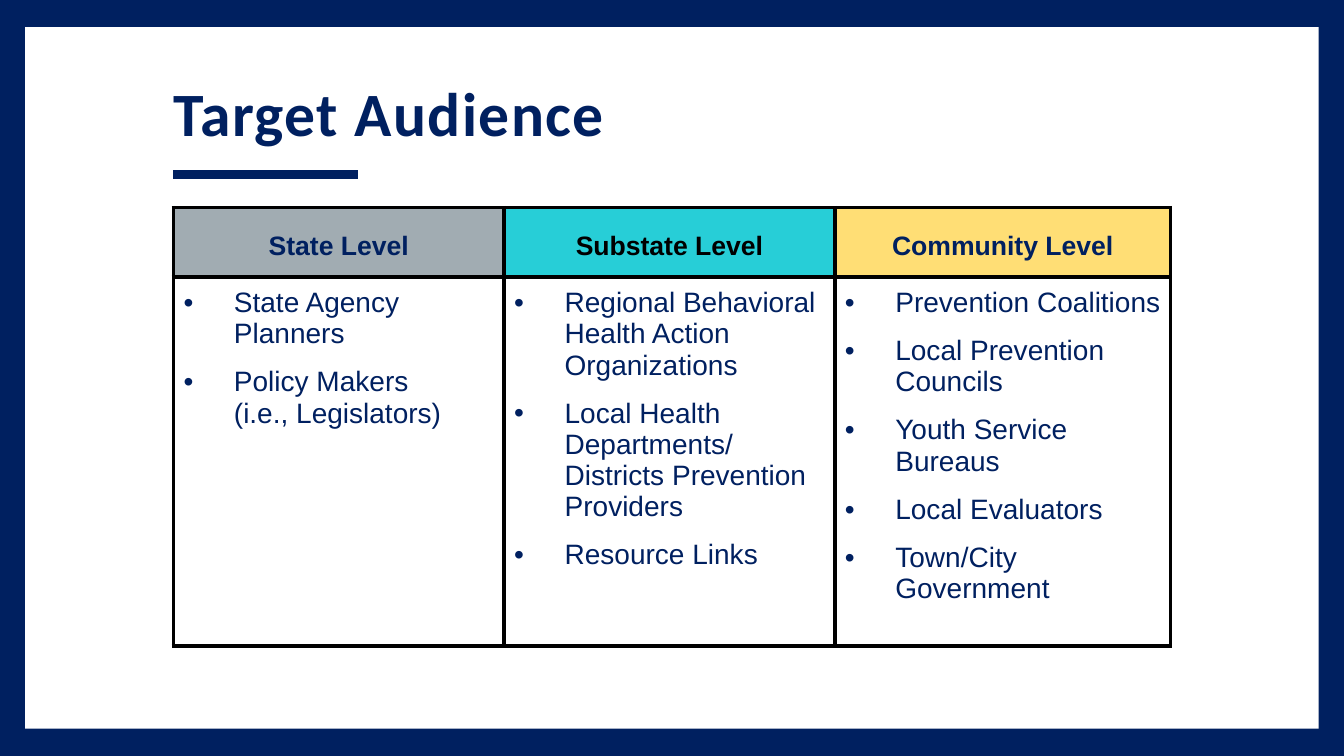
from lxml import etree
from pptx import Presentation
from pptx.dml.color import RGBColor
from pptx.enum.shapes import MSO_CONNECTOR, MSO_SHAPE
from pptx.enum.text import MSO_ANCHOR, PP_ALIGN
from pptx.oxml.ns import qn
from pptx.util import Inches, Pt

RECTANGLE = MSO_SHAPE.RECTANGLE
STRAIGHT = MSO_CONNECTOR.STRAIGHT
MIDDLE, TOP, BOTTOM = MSO_ANCHOR.MIDDLE, MSO_ANCHOR.TOP, MSO_ANCHOR.BOTTOM
CENTER = PP_ALIGN.CENTER

NAVY, BLACK, WHITE = "002060", "000000", "FFFFFF"
TITLE = "Target Audience"
AUDIENCES = [
    {"level": "State Level", "fill": "A1ACB2", "color": NAVY,
     "groups": ["State Agency Planners", "Policy Makers\v(i.e., Legislators)"]},
    {"level": "Substate Level", "fill": "27CED7", "color": BLACK,
     "groups": ["Regional Behavioral Health Action Organizations",
                "Local Health Departments/ Districts Prevention Providers",
                "Resource Links"]},
    {"level": "Community Level", "fill": "FFDE75", "color": NAVY,
     "groups": ["Prevention Coalitions", "Local Prevention Councils",
                "Youth Service Bureaus", "Local Evaluators",
                "Town/City Government"]},
]

WIDTH, HEIGHT = 13.33, 7.5
LEFT = 1.72
FRAME_X, FRAME_Y = 0.25, 0.27
TITLE_TOP, TITLE_WIDTH, TITLE_HEIGHT = 0.11, 10.82, 1.36
RULE_Y, RULE_LENGTH, RULE_WEIGHT = 1.73, 1.83, 6
TABLE_TOP = 2.06
COLUMN_WIDTHS = [3.28, 3.28, 3.33]
ROW_HEIGHTS = [0.69, 3.66]
CELL_INSET, BULLET_INDENT, BORDER_WEIGHT = 0.1, 0.5, 3

TITLE_FONT = {"name": "Calibri", "size": Pt(44), "bold": True}
HEADER_FONT = {"name": "Arial", "size": Pt(19), "bold": True}
BODY_FONT = {"name": "Arial", "size": Pt(20), "bold": False}
TITLE_PARAGRAPH = {"line_spacing": 0.8, "space_after": Pt(6)}
HEADER_PARAGRAPH = {"alignment": CENTER, "line_spacing": Pt(26.4)}
BODY_PARAGRAPH = {"space_after": Pt(12)}
SIDES = ["left", "right", "top", "bottom"]


def rgb(value):
    return RGBColor.from_string(value)


def apply(target, values):
    for name, value in values.items():
        setattr(target, name, value)


def set_fill(target, color):
    target.fill.solid()
    target.fill.fore_color.rgb = rgb(color)


def write(paragraph, text, paragraph_format, font_format, color):
    paragraph.text = text
    apply(paragraph, paragraph_format)
    for run in paragraph.runs:
        apply(run.font, font_format)
        run.font.color.rgb = rgb(color)


def add_bullet(paragraph):
    properties = paragraph._p.get_or_add_pPr()
    properties.set("marL", str(Inches(BULLET_INDENT)))
    properties.set("indent", str(-Inches(BULLET_INDENT)))
    etree.SubElement(properties, qn("a:buFont")).set("typeface", "Arial")
    etree.SubElement(properties, qn("a:buChar")).set("char", "•")


def add_borders(cell):
    properties = cell._tc.get_or_add_tcPr()
    for index, side in enumerate(["L", "R", "T", "B"]):
        border = etree.Element(qn(f"a:ln{side}"), w=str(Pt(BORDER_WEIGHT)))
        fill = etree.SubElement(border, qn("a:solidFill"))
        etree.SubElement(fill, qn("a:srgbClr")).set("val", BLACK)
        properties.insert(index, border)


def format_cell(cell, color, anchor):
    apply(cell, {f"margin_{side}": Inches(CELL_INSET) for side in SIDES})
    cell.vertical_anchor = anchor
    set_fill(cell, color)
    add_borders(cell)


def add_frame(slide):
    set_fill(slide.background, NAVY)
    panel = slide.shapes.add_shape(
        RECTANGLE, Inches(FRAME_X), Inches(FRAME_Y),
        Inches(WIDTH - 2 * FRAME_X), Inches(HEIGHT - 2 * FRAME_Y))
    panel.shadow.inherit = False
    set_fill(panel, WHITE)
    panel.line.fill.background()


def add_title(slide):
    box = slide.shapes.add_textbox(
        Inches(LEFT), Inches(TITLE_TOP), Inches(TITLE_WIDTH), Inches(TITLE_HEIGHT))
    frame = box.text_frame
    apply(frame, {f"margin_{side}": 0 for side in SIDES})
    apply(frame, {"word_wrap": True, "vertical_anchor": BOTTOM})
    paragraph = frame.paragraphs[0]
    write(paragraph, TITLE, TITLE_PARAGRAPH, TITLE_FONT, NAVY)
    paragraph.runs[0]._r.get_or_add_rPr().set("spc", "100")


def add_table(slide):
    table = slide.shapes.add_table(
        len(ROW_HEIGHTS), len(AUDIENCES), Inches(LEFT), Inches(TABLE_TOP),
        Inches(sum(COLUMN_WIDTHS)), Inches(sum(ROW_HEIGHTS))).table
    for column, width in zip(table.columns, COLUMN_WIDTHS):
        column.width = Inches(width)
    for row, height in zip(table.rows, ROW_HEIGHTS):
        row.height = Inches(height)
    for index, audience in enumerate(AUDIENCES):
        header, body = table.cell(0, index), table.cell(1, index)
        format_cell(header, audience["fill"], MIDDLE)
        write(header.text_frame.paragraphs[0], audience["level"],
              HEADER_PARAGRAPH, HEADER_FONT, audience["color"])
        format_cell(body, WHITE, TOP)
        frame = body.text_frame
        for position, group in enumerate(audience["groups"]):
            paragraph = frame.add_paragraph() if position else frame.paragraphs[0]
            write(paragraph, group, BODY_PARAGRAPH, BODY_FONT, NAVY)
            add_bullet(paragraph)


def add_rule(slide):
    rule = slide.shapes.add_connector(
        STRAIGHT, Inches(LEFT), Inches(RULE_Y),
        Inches(LEFT + RULE_LENGTH), Inches(RULE_Y))
    rule.line.color.rgb = rgb(NAVY)
    rule.line.width = Pt(RULE_WEIGHT)
    etree.SubElement(rule._element.spPr, qn("a:effectLst"))


def main():
    presentation = Presentation()
    presentation.slide_width = Inches(WIDTH)
    presentation.slide_height = Inches(HEIGHT)
    slide = presentation.slides.add_slide(presentation.slide_layouts[6])
    add_frame(slide)
    add_title(slide)
    add_table(slide)
    add_rule(slide)
    presentation.save("out.pptx")


if __name__ == "__main__":
    main()
